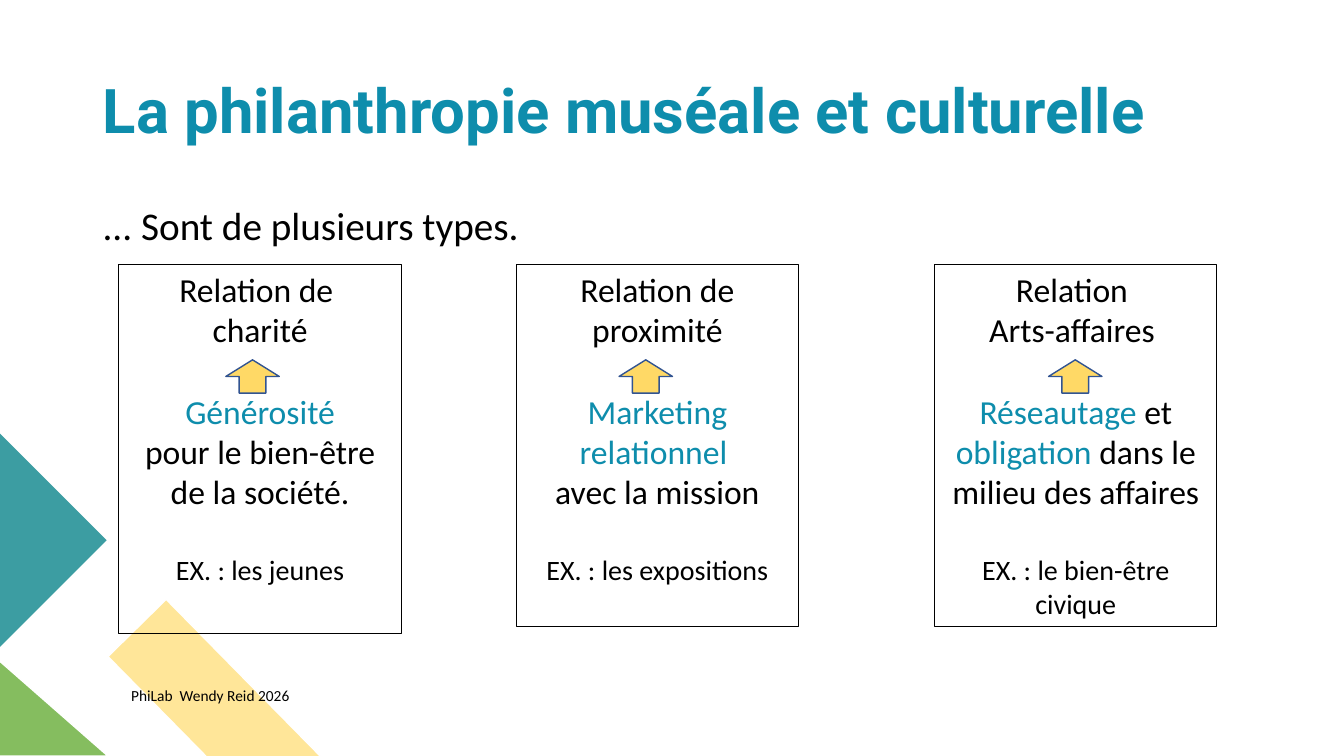
from pptx import Presentation
from pptx.dml.color import RGBColor
from pptx.enum import shapes, text
from pptx.util import Inches, Pt

BLACK, WHITE, BLUE = "000000", "FFFFFF", "0E8DAC"
SHAPE = shapes.MSO_SHAPE


def rgb(value):
    return RGBColor.from_string(value)


class SlideBuilder:
    """Holds the text style and the slide being filled."""
    font = "Calibri"

    def __init__(self, prs):
        self.s = prs.slides.add_slide(prs.slide_layouts[5])

    def style(self, p, size, color=BLACK, font=None, bold=False):
        p.font.name = font or self.font
        p.font.size = Pt(size)
        p.font.bold = bold
        p.font.color.rgb = rgb(color)

    def title(self, words, left, top, width, height):
        sp = self.s.shapes.title
        sp.left, sp.top = Inches(left), Inches(top)
        sp.width, sp.height = Inches(width), Inches(height)
        tf = sp.text_frame
        tf.text = words
        tf.auto_size = text.MSO_AUTO_SIZE.NONE
        tf.vertical_anchor = text.MSO_ANCHOR.MIDDLE
        p = tf.paragraphs[0]
        p.alignment = text.PP_ALIGN.LEFT
        p.line_spacing = 0.9
        self.style(p, 44, BLUE, "Roboto", True)

    def label(self, words, left, top, width, height, size, inset=0.1, spacing=1.0):
        sp = self.s.shapes.add_textbox(Inches(left), Inches(top), Inches(width), Inches(height))
        tf = sp.text_frame
        tf.word_wrap = True
        tf.margin_left = tf.margin_right = Inches(inset)
        tf.margin_top = tf.margin_bottom = Inches(inset / 2)
        p = tf.paragraphs[0]
        p.text = words
        p.line_spacing = spacing
        self.style(p, size)

    def shape(self, kind, left, top, width, height, fill=None, line=WHITE, weight=1, rotation=0):
        sp = self.s.shapes.add_shape(kind, Inches(left), Inches(top), Inches(width), Inches(height))
        sp.shadow.inherit = False
        sp.rotation = rotation
        if fill:
            sp.fill.solid()
            sp.fill.fore_color.rgb = rgb(fill)
        else:
            sp.fill.background()
        sp.line.color.rgb = rgb(line)
        sp.line.width = Pt(weight)
        return sp

    def card(self, left, height, groups):
        """Draw a framed box; groups of paragraphs are set one line apart.

        A paragraph is a list of (words, color) runs.
        """
        sp = self.shape(SHAPE.RECTANGLE, left, 2.62, 2.8, height, line=BLACK, weight=0.75)
        tf = sp.text_frame
        tf.word_wrap = True
        tf.vertical_anchor = text.MSO_ANCHOR.TOP
        p = tf.paragraphs[0]
        for g, (size, paragraphs) in enumerate(groups):
            for i, runs in enumerate(paragraphs):
                if g or i:
                    p = tf.add_paragraph()
                p.alignment = text.PP_ALIGN.CENTER
                p.space_before = Pt(29.3 if g and not i else 0)
                self.style(p, size)
                for words, color in runs:
                    r = p.add_run()
                    r.text = words
                    r.font.color.rgb = rgb(color)


# left, height, arrow left, heading, explanation, example
RELATIONS = [
    (1.18, 3.67, 2.24, ["Relation de ", "charité"],
     [[("Générosité", BLUE)], [("pour le bien-être de la société.", BLACK)]],
     "EX. : les jeunes"),
    (5.12, 3.6, 6.14, ["Relation de proximité"],
     [[("Marketing relationnel ", BLUE)], [("avec la mission", BLACK)]],
     "EX. : les expositions"),
    (9.27, 3.6, 10.4, ["Relation ", "Arts-affaires "],
     [[("Réseautage", BLUE), (" et ", BLACK), ("obligation", BLUE),
       (" dans le milieu des affaires", BLACK)]],
     "EX. : le bien-être civique"),
]


def main():
    prs = Presentation()
    prs.slide_width, prs.slide_height = Inches(13.33), Inches(7.5)
    slide = SlideBuilder(prs)

    slide.shape(SHAPE.RECTANGLE, 1.81, 5.88, 0.81, 2.44, "FFE699", rotation=315.5)
    slide.title("La philanthropie muséale et culturelle", 0.92, 0.4, 11.5, 1.45)
    slide.label("... Sont de plusieurs types.", 0.92, 2, 11.5, 0.6, 28, spacing=0.9)

    for left, height, arrow_left, heading, explanation, example in RELATIONS:
        slide.card(left, height, [
            (24, [[(words, BLACK)] for words in heading]),
            (24, explanation),
            (20, [[(example, BLACK)]]),
        ])
        slide.shape(SHAPE.UP_ARROW, arrow_left, 3.57, 0.53, 0.33, "FFD966", "325491")

    slide.label("PhiLab  Wendy Reid 2026", 1.3, 6.81, 1.89, 0.32, 11, inset=0)
    slide.shape(SHAPE.RIGHT_TRIANGLE, -0.07, 6.5, 1.14, 1, "85BD5F")
    slide.shape(SHAPE.ISOSCELES_TRIANGLE, -0.64, 4.79, 2.28, 1.14, "3C9DA2", rotation=90)

    prs.save("out.pptx")


if __name__ == "__main__":
    main()
